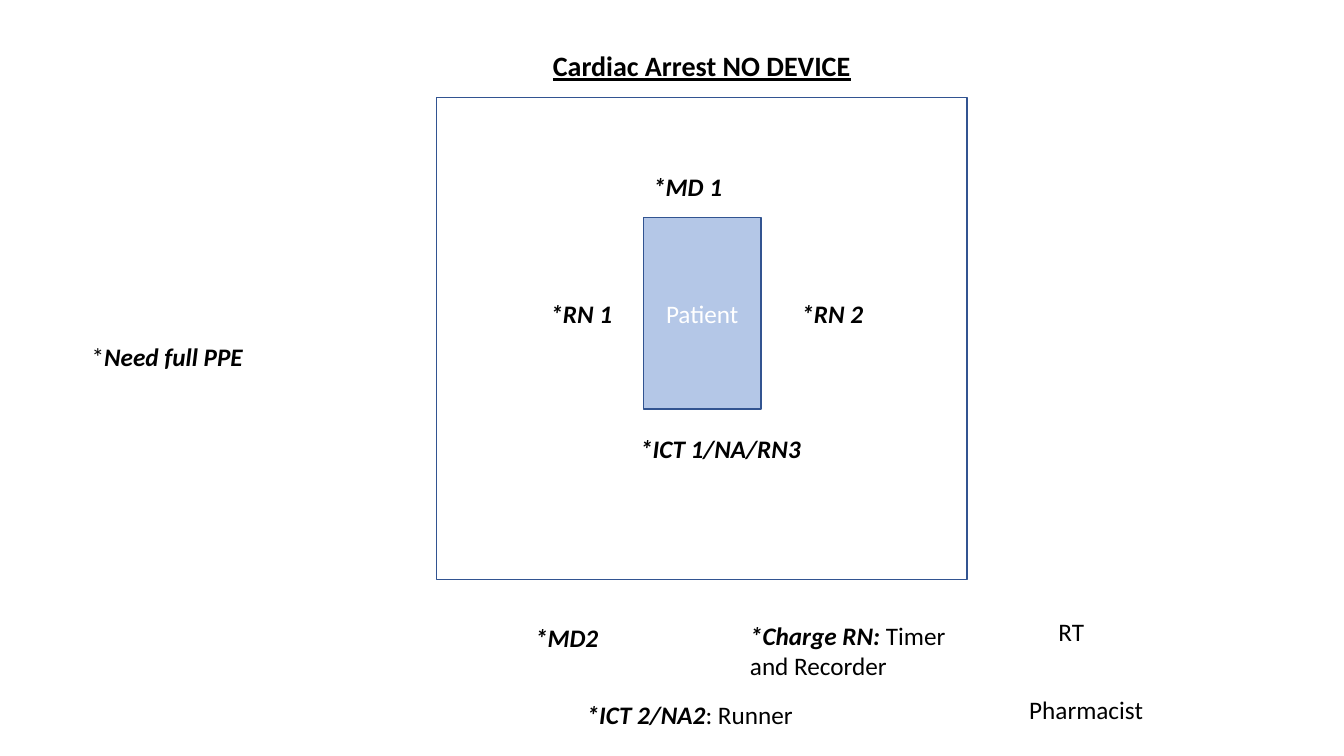
from pptx import Presentation
from pptx.dml.color import RGBColor
from pptx.enum.shapes import MSO_SHAPE as Shape
from pptx.enum.text import MSO_ANCHOR as Anchor, MSO_AUTO_SIZE as AutoSize, PP_ALIGN as Align
from pptx.util import Inches, Pt

BLACK = RGBColor(0x00, 0x00, 0x00)
WHITE = RGBColor(0xFF, 0xFF, 0xFF)
OUTLINE = RGBColor(0x32, 0x54, 0x91)
BED_BLUE = RGBColor(0xB4, 0xC7, 0xE7)
FONT = "Calibri"
LINE_HEIGHT = 0.4

deck = Presentation()
deck.slide_width, deck.slide_height = Inches(13.33), Inches(7.5)
slide = deck.slides.add_slide(deck.slide_layouts[5])


def style(paragraph, size, color, align=Align.LEFT):
    paragraph.alignment = align
    paragraph.font.name = FONT
    paragraph.font.size = Pt(size)
    paragraph.font.color.rgb = color


def add_box(left, top, width, height, fill):
    box = slide.shapes.add_shape(
        Shape.RECTANGLE, Inches(left), Inches(top), Inches(width), Inches(height))
    box.shadow.inherit = False
    box.fill.solid()
    box.fill.fore_color.rgb = fill
    box.line.color.rgb = OUTLINE
    box.line.width = Pt(1)
    return box


# Title
title = slide.shapes.title
title.left, title.top, title.width, title.height = map(Inches, (5.31, 0.43, 3.3, 0.44))
title.text_frame.text = "Cardiac Arrest NO DEVICE"
title.text_frame.auto_size = AutoSize.NONE
title.text_frame.vertical_anchor = Anchor.MIDDLE
heading = title.text_frame.paragraphs[0]
style(heading, 20, BLACK, Align.CENTER)
heading.font.bold = True
heading.font.underline = True

# Room with the patient inside
add_box(4.33, 0.97, 5.26, 4.78, WHITE)
patient = add_box(6.38, 2.16, 1.17, 1.9, BED_BLUE)
patient.text_frame.text = "Patient"
patient.text_frame.vertical_anchor = Anchor.MIDDLE
style(patient.text_frame.paragraphs[0], 18, WHITE, Align.CENTER)

# Team roles: left, top, width, lines, alignment, then (text, emphasised) parts
roles = [
    # Inside the room
    (6.38, 1.65, 1.17, 1, Align.LEFT, [("*MD 1", True)]),
    (5.36, 2.91, 0.88, 1, Align.LEFT, [("*RN 1", True)]),
    (7.85, 2.91, 0.88, 1, Align.LEFT, [("*RN 2", True)]),
    (6.25, 4.25, 1.89, 1, Align.LEFT, [("*ICT 1/NA/RN3", True)]),
    # Outside the room
    (4.93, 6.12, 1.38, 1, Align.CENTER, [("*MD2", True)]),
    (7.34, 6.1, 2.33, 2, Align.LEFT, [("*Charge RN: ", True), ("Timer and Recorder", False)]),
    (5.72, 6.89, 3.26, 1, Align.LEFT, [("*ICT 2/NA2", True), (": Runner", False)]),
    (10.4, 6.07, 0.53, 1, Align.LEFT, [("RT", False)]),
    (10.11, 6.84, 1.46, 1, Align.LEFT, [("Pharmacist", False)]),
    # Legend
    (0.81, 3.34, 2.25, 1, Align.LEFT, [("*", False), ("Need full PPE", True)]),
]
for left, top, width, lines, align, parts in roles:
    height = LINE_HEIGHT + 0.31 * (lines - 1)
    role = slide.shapes.add_textbox(
        Inches(left), Inches(top), Inches(width), Inches(height)).text_frame
    role.word_wrap = True
    role.auto_size = AutoSize.SHAPE_TO_FIT_TEXT
    style(role.paragraphs[0], 18, BLACK, align)
    for text, emphasised in parts:
        run = role.paragraphs[0].add_run()
        run.text = text
        run.font.bold = run.font.italic = emphasised

deck.save("out.pptx")
